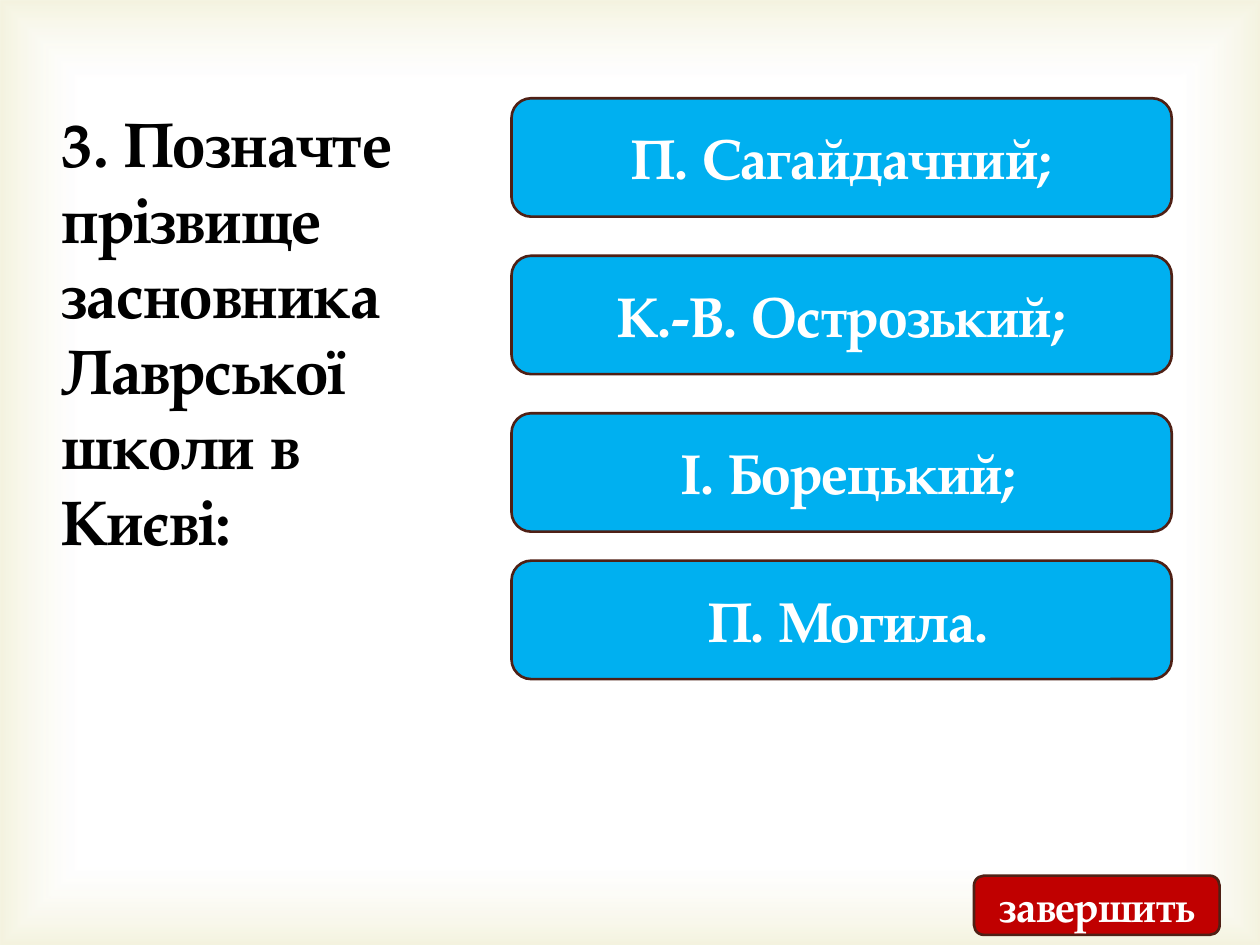
from pptx import Presentation
from pptx.dml.color import RGBColor
from pptx.enum.shapes import MSO_SHAPE
from pptx.enum.text import MSO_ANCHOR, MSO_AUTO_SIZE, PP_ALIGN
from pptx.oxml import parse_xml
from pptx.oxml.ns import nsdecls
from pptx.util import Inches, Pt

RECTANGLE, ROUNDED = MSO_SHAPE.RECTANGLE, MSO_SHAPE.ROUNDED_RECTANGLE
TOP, MIDDLE = MSO_ANCHOR.TOP, MSO_ANCHOR.MIDDLE
LEFT, CENTER = PP_ALIGN.LEFT, PP_ALIGN.CENTER
FIT_SHAPE = MSO_AUTO_SIZE.SHAPE_TO_FIT_TEXT

FONT = "TeX Gyre Pagella"
BLACK, WHITE, BLUE, RED, BROWN = "000000", "FFFFFF", "00B0F0", "C00000", "4F2015"
GLOW_STOPS = [(83, "FFFFFF", 11), (100, "D1CA75", 23)]
QUESTION = ["3. Позначте прізвище засновника Лаврської", "школи в", "Києві:"]
ANSWERS = [
    (0.78, "П. Сагайдачний;"),
    (2.03, "К.-В. Острозький;"),
    (3.28, " І. Борецький;"),
    (4.45, " П. Могила."),
]


def color(hex_code):
    """Turn a hex string into a colour."""
    return RGBColor.from_string(hex_code)


def place(shape, left, top, width, height):
    """Position and size a shape, in inches."""
    shape.left, shape.top = Inches(left), Inches(top)
    shape.width, shape.height = Inches(width), Inches(height)


def write(frame, lines, size, hex_code, align, anchor):
    """Fill a text frame with one bold paragraph per line."""
    frame.word_wrap = True
    frame.vertical_anchor = anchor
    for index, line in enumerate(lines):
        paragraph = frame.add_paragraph() if index else frame.paragraphs[0]
        paragraph.alignment = align
        run = paragraph.add_run()
        run.text = line
        run.font.name, run.font.size, run.font.bold = FONT, Pt(size), True
        run.font.color.rgb = color(hex_code)


def add_glow(slide, width, height):
    """Add the soft frame glow behind everything else."""
    glow = slide.shapes.add_shape(RECTANGLE, 0, 0, width, height)
    glow.shadow.inherit = False
    glow.line.fill.background()
    glow.fill.background()
    stops = "".join(
        f'<a:gs pos="{position * 1000}"><a:srgbClr val="{hex_code}">'
        f'<a:alpha val="{opacity * 1000}"/></a:srgbClr></a:gs>'
        for position, hex_code, opacity in GLOW_STOPS
    )
    gradient = parse_xml(
        f'<a:gradFill {nsdecls("a")} rotWithShape="1"><a:gsLst>{stops}</a:gsLst>'
        '<a:path path="rect"><a:fillToRect l="50000" t="50000" r="50000" b="50000"/>'
        "</a:path></a:gradFill>"
    )
    properties = glow.element.spPr
    properties.replace(properties.find("{*}noFill"), gradient)
    slide.shapes.element.insert(2, glow.element)


def add_question(slide):
    """Write the question into the title placeholder."""
    title = slide.shapes.title
    place(title, 0.39, 0.78, 4.69, 3.74)
    write(title.text_frame, QUESTION, 36, BLACK, LEFT, TOP)
    title.text_frame.auto_size = FIT_SHAPE


def add_button(slide, box, label, size, fill):
    """Add a rounded button with a centred label."""
    button = slide.shapes.add_shape(ROUNDED, *map(Inches, box))
    button.shadow.inherit = False
    button.fill.solid()
    button.fill.fore_color.rgb = color(fill)
    button.line.color.rgb = color(BROWN)
    button.line.width = Pt(1.5)
    write(button.text_frame, [label], size, WHITE, CENTER, MIDDLE)


def main():
    """Build the quiz slide."""
    deck = Presentation()
    deck.slide_width, deck.slide_height = Inches(10), Inches(7.5)
    slide = deck.slides.add_slide(deck.slide_layouts[5])
    slide.background.fill.solid()
    slide.background.fill.fore_color.rgb = color(WHITE)
    add_glow(slide, deck.slide_width, deck.slide_height)
    add_question(slide)
    for top, answer in ANSWERS:
        add_button(slide, (4.06, top, 5.24, 0.94), answer, 32, BLUE)
    add_button(slide, (7.73, 6.95, 1.95, 0.47), "завершить", 24, RED)
    deck.save("out.pptx")


if __name__ == "__main__":
    main()
